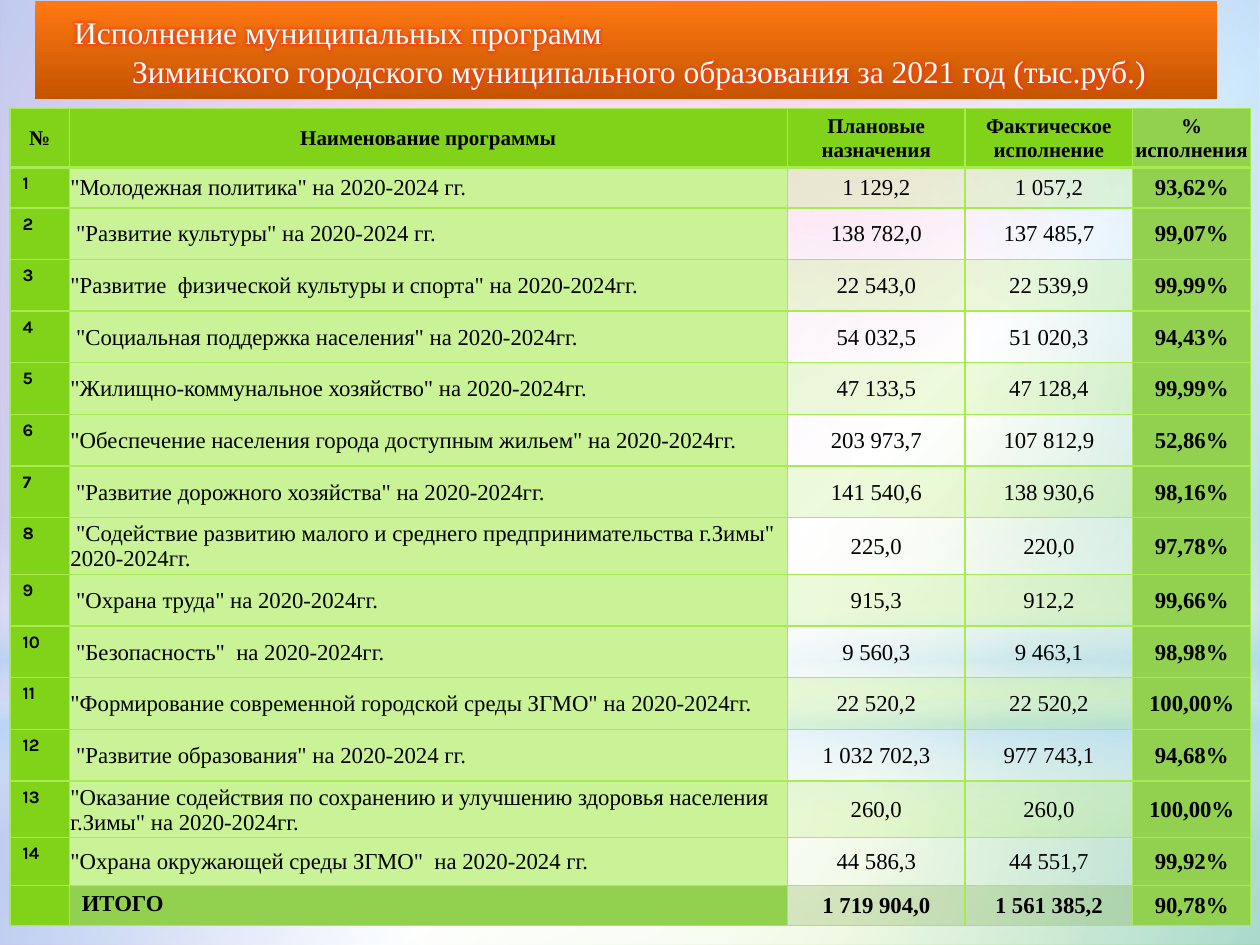
from typing import NamedTuple, Optional

import pptx
from pptx import oxml as ox
from pptx import util as u
from pptx.dml import color as col
from pptx.enum import shapes as sh
from pptx.enum import text as tx
from pptx.oxml import ns

Pt = u.Pt
SERIF = "Times New Roman"
LIME, GREEN, PALE, EDGE, DARK = "81D31A", "92D050", "CAF297", "A7EA52", "568D11"
MID, LEFT = tx.PP_ALIGN.CENTER, tx.PP_ALIGN.LEFT


class Stop(NamedTuple):
    at: int
    tone: str
    alpha: int = 100


class Veil(NamedTuple):
    kind: int
    top: float
    high: float
    stops: list[Stop]
    angle: Optional[int] = None


class Item(NamedTuple):
    name: str
    plan: str
    fact: str
    share: str


class Look(NamedTuple):
    tone: Optional[str]
    alpha: int = 100
    size: float = 13
    bold: bool = False
    align: int = MID
    face: str = SERIF
    pad: tuple = (0.72, 0.72, 0.72, 0)
    anchor: int = tx.MSO_ANCHOR.MIDDLE


VEILS = [
    Veil(sh.MSO_SHAPE.RECTANGLE, 401.76, 138.24,
         [Stop(0, "FFFFFF", 91), Stop(37, "FFFFFF", 76), Stop(100, "B4DCFA", 79)]),
    Veil(sh.MSO_SHAPE.RECTANGLE, 0, 401.76,
         [Stop(0, "FFFFFF", 89), Stop(48, "FFFFFF", 62), Stop(100, "B4DCFA", 79)]),
    Veil(sh.MSO_SHAPE.RECTANGLE, 296.64, 180,
         [Stop(0, "FFFFFF", 0), Stop(29, "FFFFFF", 30), Stop(45, "B4DCFA", 40),
          Stop(55, "FFFFFF", 26), Stop(65, "B4DCFA", 60), Stop(100, "FFFFFF", 0)], 90),
    Veil(sh.MSO_SHAPE.OVAL, 126, 401.76, [Stop(0, "FFFFFF"), Stop(56, "FFFFFF", 0)]),
]
HEADS = ["№", "Наименование программы", "Плановые назначения",
         "Фактическое исполнение", "% исполнения"]
ITEMS = [
    Item('"Молодежная политика" на 2020-2024 гг.', "1 129,2", "1 057,2", "93,62%"),
    Item(' "Развитие культуры" на 2020-2024 гг.', "138 782,0", "137 485,7", "99,07%"),
    Item('"Развитие  физической культуры и спорта" на 2020-2024гг.',
         "22 543,0", "22 539,9", "99,99%"),
    Item(' "Социальная поддержка населения" на 2020-2024гг.',
         "54 032,5", "51 020,3", "94,43%"),
    Item('"Жилищно-коммунальное хозяйство" на 2020-2024гг.',
         "47 133,5", "47 128,4", "99,99%"),
    Item('"Обеспечение населения города доступным жильем" на 2020-2024гг.',
         "203 973,7", "107 812,9", "52,86%"),
    Item(' "Развитие дорожного хозяйства" на 2020-2024гг.',
         "141 540,6", "138 930,6", "98,16%"),
    Item(' "Содействие развитию малого и среднего предпринимательства г.Зимы" 2020-2024гг.',
         "225,0", "220,0", "97,78%"),
    Item(' "Охрана труда" на 2020-2024гг.', "915,3", "912,2", "99,66%"),
    Item(' "Безопасность"  на 2020-2024гг.', "9 560,3", "9 463,1", "98,98%"),
    Item('"Формирование современной городской среды ЗГМО" на 2020-2024гг.',
         "22 520,2", "22 520,2", "100,00%"),
    Item(' "Развитие образования" на 2020-2024 гг.', "1 032 702,3", "977 743,1", "94,68%"),
    Item('"Оказание содействия по сохранению и улучшению здоровья населения '
         'г.Зимы" на 2020-2024гг.', "260,0", "260,0", "100,00%"),
    Item('"Охрана окружающей среды ЗГМО"  на 2020-2024 гг.',
         "44 586,3", "44 551,7", "99,92%"),
]
TOTAL = ["", "ИТОГО", "1 719 904,0", "1 561 385,2", "90,78%"]
COLS = [33.84, 410.4, 101.52, 95.76, 67.4]
ROWS = [33.84, 23.04] + [29.52] * 6 + [32.4] + [29.52] * 4 + [32.4, 27.36, 23.04]


def node(text: str):
    """Turn a drawing snippet into an element."""
    return ox.parse_xml(text.replace(">", f" {ns.nsdecls('a')}>", 1))


def paint(fill, tone: str, alpha: int = 100) -> None:
    """Set a solid colour from a hex string."""
    fill.solid()
    fill.fore_color.rgb = col.RGBColor.from_string(tone)
    if alpha < 100:
        mark = fill._xPr.find(".//" + ns.qn("a:srgbClr"))
        mark.append(node(f'<a:alpha val="{alpha * 1000}"></a:alpha>'))


def blend(owner, fill, stops: list[Stop], angle: Optional[int] = None) -> None:
    """Fill with a linear gradient, or a round one when no angle is given."""
    fill.background()
    old = owner.element.find(".//" + ns.qn("a:noFill"))
    marks = "".join(
        f'<a:gs pos="{s.at * 1000}"><a:srgbClr val="{s.tone}">'
        f'<a:alpha val="{s.alpha * 1000}"/></a:srgbClr></a:gs>' for s in stops)
    if angle is None:
        way = ('<a:path path="circle"><a:fillToRect l="50000" t="50000" '
               'r="50000" b="50000"/></a:path>')
    else:
        way = f'<a:lin ang="{angle * 60000}" scaled="0"/>'
    new = node(f"<a:gradFill><a:gsLst>{marks}</a:gsLst>{way}</a:gradFill>")
    old.getparent().replace(old, new)


def write(para, text: str, size: float, tone: str, face: str = SERIF, bold: bool = False):
    """Add one formatted run."""
    run = para.add_run()
    run.text = text
    run.font.size, run.font.name, run.font.bold = Pt(size), face, bold
    paint(run.font.fill, tone)
    return run


def edge(cell, row: int) -> None:
    """Draw the four borders, with a thicker rule under the heading."""
    wide = {"T": 2 if row == 1 else 1, "B": 2 if row == 0 else 1}
    for i, side in enumerate("LRTB"):
        line = node(f'<a:ln{side} w="{Pt(wide.get(side, 1))}"><a:solidFill>'
                    f'<a:srgbClr val="{EDGE}"/></a:solidFill></a:ln{side}>')
        cell._tc.get_or_add_tcPr().insert(i, line)


def style(row: int, place: int) -> Look:
    """Choose the look of a cell by its place."""
    last = row == len(ROWS) - 1
    roomy = (7.2, 3.6, 7.2, 3.6)
    top = tx.MSO_ANCHOR.TOP
    if row == 0:
        return Look(GREEN if place == 4 else LIME, size=12, bold=True)
    if place == 0:
        return Look(LIME, size=10, bold=True, align=LEFT, face="Karla",
                    pad=(7.2, 0, 7.2, 0) if last else roomy, anchor=top)
    if place == 1:
        if last:
            return Look(GREEN, bold=True, align=LEFT, pad=roomy, anchor=top)
        return Look(PALE, align=LEFT)
    if place == 4:
        return Look(GREEN, bold=True)
    if last:
        return Look(DARK, 20, bold=True)
    return Look(EDGE, 20) if row % 2 else Look(None)


def fill(cell, text: str, row: int, place: int) -> None:
    """Write and format one table cell."""
    look = style(row, place)
    (cell.margin_left, cell.margin_top,
     cell.margin_right, cell.margin_bottom) = map(Pt, look.pad)
    cell.vertical_anchor = look.anchor
    para = cell.text_frame.paragraphs[0]
    para.alignment = look.align
    if text:
        write(para, text, look.size, "000000", look.face, look.bold)
    if look.tone:
        paint(cell.fill, look.tone, look.alpha)
    else:
        cell.fill.background()
    edge(cell, row)


def grid(slide) -> None:
    """Build the table of programmes."""
    data = [HEADS, *([str(n), *item] for n, item in enumerate(ITEMS, 1)), TOTAL]
    table = slide.shapes.add_table(len(ROWS), len(COLS), Pt(5.76), Pt(61.92),
                                   Pt(sum(COLS)), Pt(sum(ROWS))).table
    table.first_row = table.horz_banding = False
    for part, wide in zip(table.columns, COLS):
        part.width = Pt(wide)
    for part, high in zip(table.rows, ROWS):
        part.height = Pt(high)
    for r, line in enumerate(data):
        for c, text in enumerate(line):
            fill(table.cell(r, c), text, r, c)


def cover(slide, veil: Veil) -> None:
    """Lay one translucent layer over the background."""
    shape = slide.shapes.add_shape(veil.kind, 0, Pt(veil.top), Pt(720), Pt(veil.high))
    shape.shadow.inherit = False
    blend(shape, shape.fill, veil.stops, veil.angle)
    shape.line.fill.background()


def banner(slide) -> None:
    """Shape the title as a rounded orange banner."""
    title = slide.shapes.title
    title.left, title.top, title.width, title.height = map(Pt, (20.16, 0.72, 675.36, 56.16))
    title.element.spPr.append(node('<a:prstGeom prst="roundRect"><a:avLst/></a:prstGeom>'))
    blend(title, title.fill, [Stop(0, "FF7813"), Stop(100, "C45400")], 90)
    frame = title.text_frame
    frame.word_wrap, frame.auto_size = True, tx.MSO_AUTO_SIZE.NONE
    frame.vertical_anchor = tx.MSO_ANCHOR.MIDDLE
    first, second = frame.paragraphs[0], frame.add_paragraph()
    first.alignment, second.alignment = LEFT, MID
    first._p.get_or_add_pPr().set("marL", str(Pt(15)))
    for para, text in ((first, "Исполнение муниципальных программ"),
                       (second, "Зиминского городского муниципального образования "
                                "за 2021 год (тыс.руб.)")):
        para.line_spacing = 1.05
        run = write(para, text, 18, "FFFFFF")
        glow = node(f'<a:effectLst><a:glow rad="{Pt(4)}"><a:srgbClr val="F03C14">'
                    '<a:alpha val="60000"/></a:srgbClr></a:glow></a:effectLst>')
        run.font.fill._xPr.find(ns.qn("a:solidFill")).addnext(glow)
    slide.shapes.element.append(title.element)


def main() -> None:
    """Build and save the slide."""
    deck = pptx.Presentation()
    deck.slide_width, deck.slide_height = Pt(720), Pt(540)
    slide = deck.slides.add_slide(deck.slide_layouts[5])
    blend(slide, slide.background.fill,
          [Stop(0, "EA8AC8"), Stop(39, "EA8AC8"), Stop(60, "FFFFFF"), Stop(100, LIME)], 45)
    for veil in VEILS:
        cover(slide, veil)
    grid(slide)
    banner(slide)
    deck.save("out.pptx")


if __name__ == "__main__":
    main()
